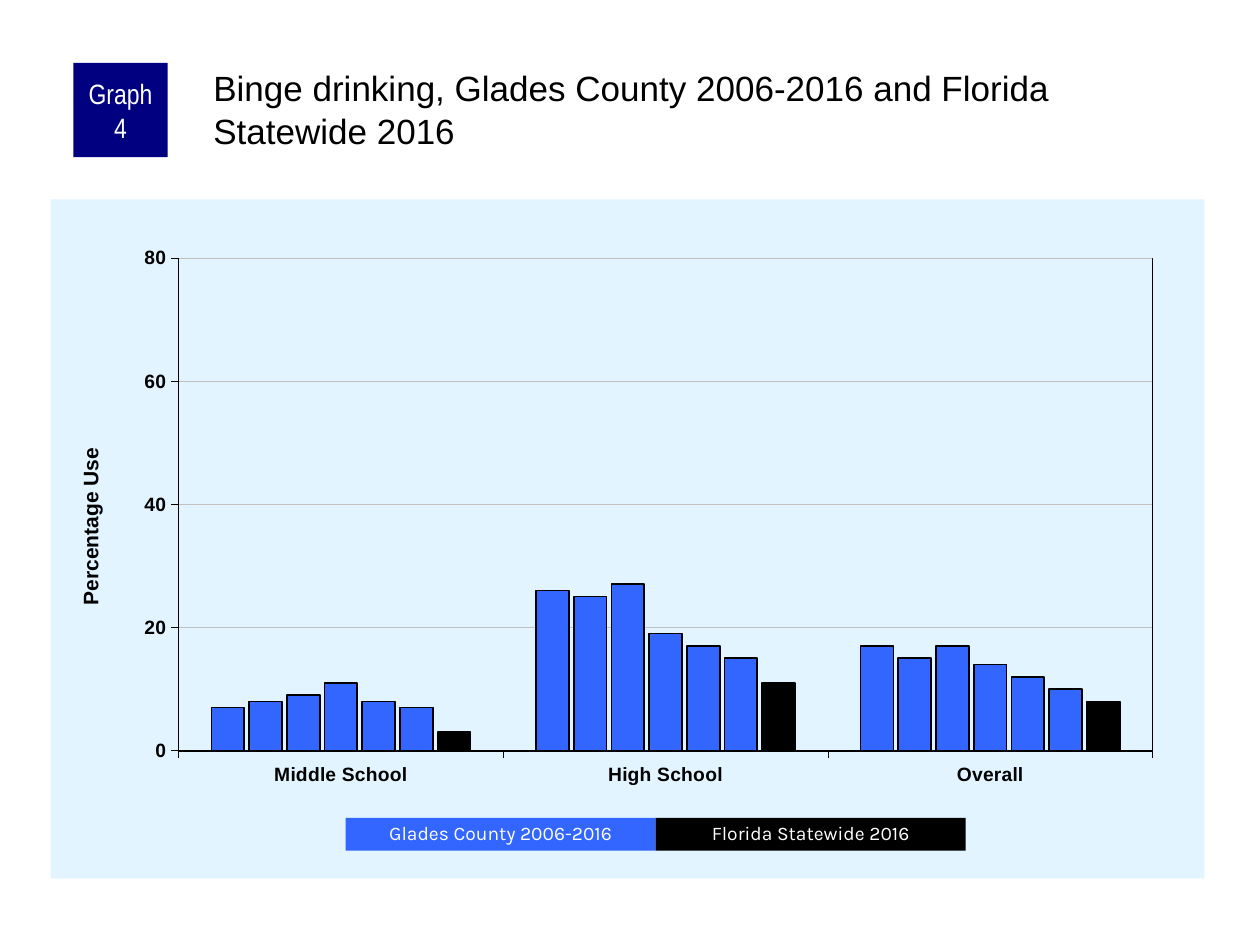
from dataclasses import dataclass

import lxml.etree
import pptx
import pptx.chart.data
import pptx.dml.color
import pptx.enum.chart
import pptx.enum.shapes
import pptx.enum.text
import pptx.oxml
import pptx.util

Cm = pptx.util.Cm
Pt = pptx.util.Pt
Align = pptx.enum.text.PP_ALIGN
Anchor = pptx.enum.text.MSO_ANCHOR
NS = ('xmlns:c="http://schemas.openxmlformats.org/drawingml/2006/chart" '
      'xmlns:a="http://schemas.openxmlformats.org/drawingml/2006/main"')

BLUE, BLACK, WHITE = "3366FF", "000000", "FFFFFF"
NAVY, PALE, GREY = "000080", "E1F4FF", "C0C0C0"


@dataclass
class Box:
    text: str
    left: float
    top: float
    width: float
    height: float
    fill: str
    font: str
    size: float
    inset: tuple[float, float] = (0.25, 0.13)
    space: float = 1.0


GROUPS = ["Middle School", "High School", "Overall"]
SERIES = [(7, 26, 17), (8, 25, 15), (9, 27, 17), (11, 19, 14),
          (8, 17, 12), (7, 15, 10), (3, 11, 8)]

KEY_W = 6.25
BOXES = [Box("Graph 4", 1.48, 1.27, 1.9, 1.9, NAVY, "Arial Narrow", 16, (0.13, 0))]
BOXES += [Box(text, 6.97 + i * KEY_W, 16.49, KEY_W, 0.66, fill, "Karla", 11, space=0.9)
          for i, (text, fill) in enumerate([("Glades County 2006-2016", BLUE),
                                            ("Florida Statewide 2016", BLACK)])]


def color(code: str) -> pptx.dml.color.RGBColor:
    return pptx.dml.color.RGBColor.from_string(code)


def style(font, name: str, size: float, code: str, bold: bool = False) -> None:
    font.name, font.size, font.bold = name, Pt(size), bold
    font.color.rgb = color(code)


def stroke(line, code: str, width: float) -> None:
    line.color.rgb = color(code)
    line.width = Pt(width)


def draw_box(slide, box: Box) -> None:
    shape = slide.shapes.add_shape(
        pptx.enum.shapes.MSO_SHAPE.RECTANGLE,
        Cm(box.left), Cm(box.top), Cm(box.width), Cm(box.height))
    shape.shadow.inherit = False
    shape.fill.solid()
    shape.fill.fore_color.rgb = color(box.fill)
    shape.line.fill.background()
    frame = shape.text_frame
    frame.text = box.text
    frame.word_wrap = True
    frame.vertical_anchor = Anchor.MIDDLE
    frame.margin_left = frame.margin_right = Cm(box.inset[0])
    frame.margin_top = frame.margin_bottom = Cm(box.inset[1])
    para = frame.paragraphs[0]
    para.alignment = Align.CENTER
    para.line_spacing = box.space
    style(para.runs[0].font, box.font, box.size, WHITE)


def draw_title(slide, text: str) -> None:
    title = slide.shapes.title
    title.left, title.top, title.width, title.height = Cm(4.22), Cm(1.27), Cm(20.12), Cm(2.11)
    frame = title.text_frame
    frame.text = text
    frame.word_wrap = True
    frame.auto_size = pptx.enum.text.MSO_AUTO_SIZE.NONE
    frame.vertical_anchor = Anchor.TOP
    frame.margin_left = frame.margin_top = Cm(0.08)
    frame.margin_right = frame.margin_bottom = 0
    para = frame.paragraphs[0]
    para.alignment = Align.LEFT
    style(para.runs[0].font, "Arial", 20, BLACK)


def layout(**parts: object) -> lxml.etree.ElementBase:
    """Manual chart layout; the parts must come in schema order."""
    body = "".join(f'<c:{tag} val="{val}"/>' for tag, val in parts.items())
    return pptx.oxml.parse_xml(
        f"<c:layout {NS}><c:manualLayout>{body}</c:manualLayout></c:layout>")


def paint(fill: str, line: str) -> lxml.etree.ElementBase:
    return pptx.oxml.parse_xml(f"<c:spPr {NS}>{fill}<a:ln w='3175'>{line}</a:ln></c:spPr>")


def solid(code: str) -> str:
    return f'<a:solidFill><a:srgbClr val="{code}"/></a:solidFill>'


def style_axis(axis) -> None:
    axis.major_tick_mark = pptx.enum.chart.XL_TICK_MARK.OUTSIDE
    axis.minor_tick_mark = pptx.enum.chart.XL_TICK_MARK.NONE
    style(axis.tick_labels.font, "Arial", 11, BLACK, True)
    stroke(axis.format.line, BLACK, 0.25)


def draw_chart(slide) -> None:
    data = pptx.chart.data.CategoryChartData()
    data.categories = GROUPS
    for i, vals in enumerate(SERIES, 1):
        data.add_series(f"Series {i}", vals)
    chart = slide.shapes.add_chart(
        pptx.enum.chart.XL_CHART_TYPE.COLUMN_CLUSTERED,
        Cm(1.02), Cm(4.02), Cm(23.26), Cm(13.69), data).chart
    chart.has_legend = chart.has_title = False
    style(chart.font, "Arial", 8, BLACK)

    # Columns: the last series is the state
    plot = chart.plots[0]
    plot.vary_by_categories = False
    plot.gap_width, plot.overlap = 200, -15
    for i, item in enumerate(plot.series, 1):
        item.format.fill.solid()
        item.format.fill.fore_color.rgb = color(BLACK if i == len(SERIES) else BLUE)
        stroke(item.format.line, BLACK, 1)

    # Axes
    style_axis(chart.category_axis)
    axis = chart.value_axis
    style_axis(axis)
    axis.minimum_scale, axis.maximum_scale, axis.major_unit = 0, 80, 20
    axis.has_major_gridlines = True
    stroke(axis.major_gridlines.format.line, GREY, 0.25)
    label = axis.axis_title
    label.text_frame.text = "Percentage Use"
    style(label.text_frame.paragraphs[0].runs[0].font, "Arial", 12, BLACK, True)

    # Upright axis title, plot frame and background
    root = label.element
    turn = root.xpath(".//a:bodyPr")[0]
    turn.set("rot", "-5400000")
    turn.set("vert", "horz")
    area = chart.element.xpath("c:chart/c:plotArea")[0]
    for host in (root, area):
        for old in host.xpath("c:layout"):
            host.remove(old)
    root.xpath("c:tx")[0].addnext(layout(xMode="edge", yMode="edge", x=0.02, y=0.36))
    area.insert(0, layout(layoutTarget="inner", xMode="edge", yMode="edge",
                          x=0.111, y=0.086, w=0.844, h=0.726))
    area.append(paint("<a:noFill/>", solid(BLACK)))
    chart.element.xpath("c:chart")[0].addnext(paint(solid(PALE), "<a:noFill/>"))


def main() -> None:
    deck = pptx.Presentation()
    deck.slide_width, deck.slide_height = Cm(25.4), Cm(19.05)
    slide = deck.slides.add_slide(deck.slide_layouts[5])
    draw_title(slide, "Binge drinking, Glades County 2006-2016 and Florida Statewide 2016")
    draw_chart(slide)
    for box in BOXES:
        draw_box(slide, box)
    deck.save("out.pptx")


if __name__ == "__main__":
    main()
